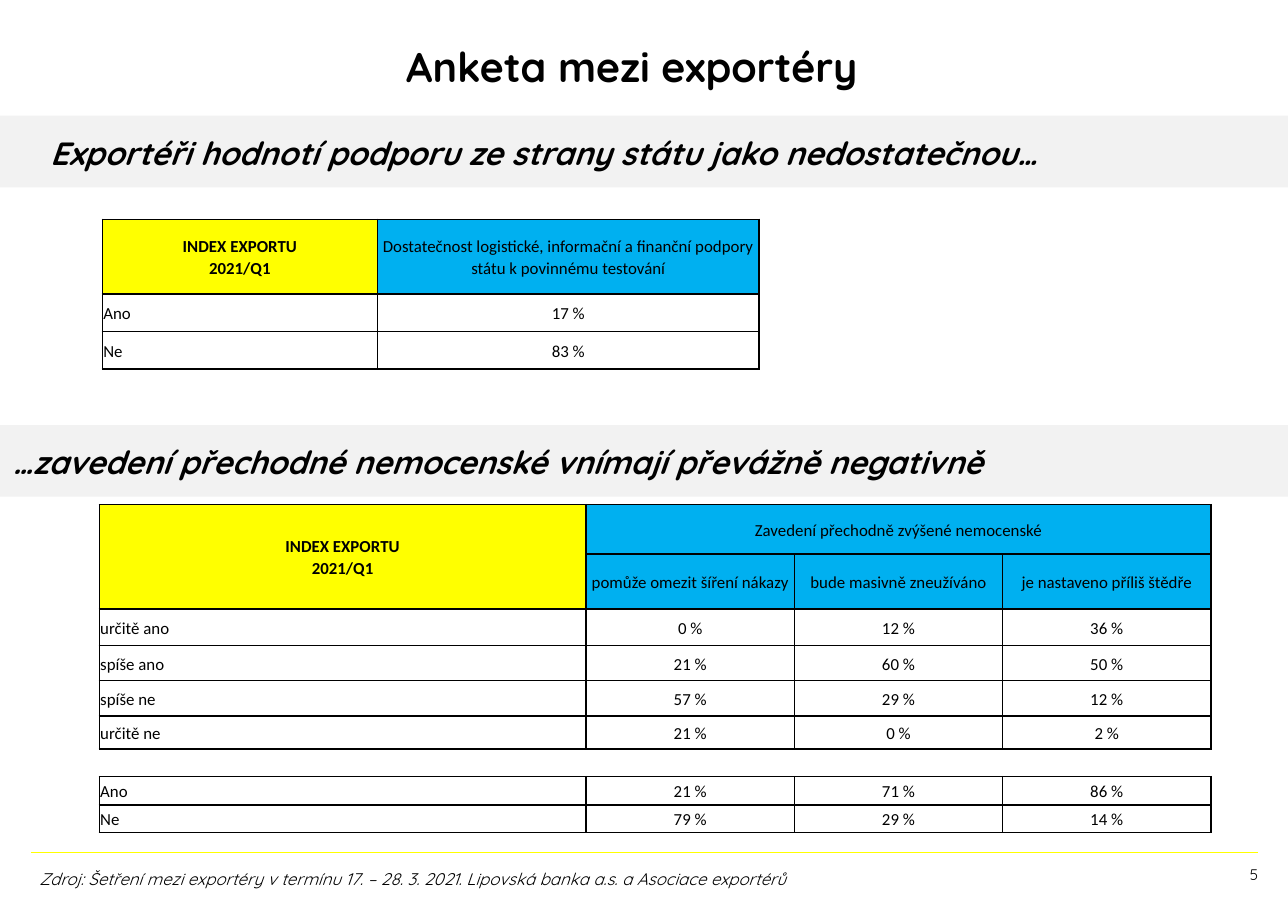
"""Builds the slide with the exporters' survey results."""
from dataclasses import dataclass

from lxml.etree import SubElement
from pptx import Presentation
from pptx.dml.color import RGBColor
from pptx.enum.shapes import MSO_CONNECTOR, MSO_SHAPE
from pptx.enum.text import MSO_ANCHOR, PP_ALIGN
from pptx.oxml.ns import qn
from pptx.util import Inches, Pt

WIDTH, HEIGHT = Inches(11.69), Inches(8.27)
PLAIN_TABLE = "{2D5ABB26-0587-4C30-8999-92F81FD0307C}"


@dataclass(frozen=True)
class Theme:
    ink: str = "000000"
    band: str = "F2F2F2"
    yellow: str = "FFFF00"
    blue: str = "00B0F0"
    display: str = "Quicksand"
    table: str = "Calibri"
    title_size: int = 27
    band_size: int = 21
    small_size: int = 11
    number_size: int = 10


THEME = Theme()

SUPPORT_ROWS = [
    ["INDEX EXPORTU\v2021/Q1",
     "Dostatečnost logistické, informační a finanční podpory státu k povinnému testování"],
    ["Ano", "17 %"],
    ["Ne", "83 %"],
]
SICK_PAY_ROWS = [
    ["INDEX EXPORTU\v2021/Q1", "Zavedení přechodně zvýšené nemocenské", "", ""],
    ["", "pomůže omezit šíření nákazy", "bude masivně zneužíváno", "je nastaveno příliš štědře"],
    ["určitě ano", "0 %", "12 %", "36 %"],
    ["spíše ano", "21 %", "60 %", "50 %"],
    ["spíše ne", "57 %", "29 %", "12 %"],
    ["určitě ne", "21 %", "0 %", "2 %"],
    ["", "", "", ""],
    ["Ano", "21 %", "71 %", "86 %"],
    ["Ne", "79 %", "29 %", "14 %"],
]


def across(percent):
    """Return a share of the slide's width."""
    return round(WIDTH * percent / 100)


def down(percent):
    """Return a share of the slide's height."""
    return round(HEIGHT * percent / 100)


def area(left, top, width, height):
    """Return a rectangle given in percent of the slide."""
    return across(left), down(top), across(width), down(height)


def write(frame, text, size, family=THEME.display, align=PP_ALIGN.LEFT, bold=False, italic=False):
    """Write one styled paragraph into a text frame."""
    frame.word_wrap = True
    frame.text = text
    para = frame.paragraphs[0]
    para.alignment = align
    font = para.font
    font.size, font.name, font.bold, font.italic = Pt(size), family, bold, italic
    font.color.rgb = RGBColor.from_string(THEME.ink)
    return para


def set_margins(target, left=0, top=0, right=0, bottom=0):
    """Set the inner margins of a text frame or a cell."""
    target.margin_left, target.margin_top = left, top
    target.margin_right, target.margin_bottom = right, bottom


def add_title(page, text):
    """Place the slide title."""
    title = page.shapes.title
    title.left, title.top, title.width, title.height = area(5.47, 2.18, 87.17, 10.04)
    frame = title.text_frame
    set_margins(frame)
    frame.vertical_anchor = MSO_ANCHOR.MIDDLE
    write(frame, text, THEME.title_size, align=PP_ALIGN.CENTER, bold=True)


def add_band(page, text, top, indent):
    """Add a full-width grey band with a heading."""
    band = page.shapes.add_shape(MSO_SHAPE.RECTANGLE, *area(0, top, 100, 7.86))
    band.shadow.inherit = False
    band.fill.solid()
    band.fill.fore_color.rgb = RGBColor.from_string(THEME.band)
    band.line.fill.background()
    frame = band.text_frame
    set_margins(frame, left=across(indent), top=down(1.93), right=across(1))
    frame.vertical_anchor = MSO_ANCHOR.TOP
    write(frame, text, THEME.band_size, bold=True, italic=True)


def add_borders(cell, sides):
    """Draw thin borders on the given sides of a cell."""
    properties = cell._tc.get_or_add_tcPr()
    for side in sides:
        line = SubElement(properties, qn(f"a:ln{side}"), w=str(Pt(1)))
        fill = SubElement(line, qn("a:solidFill"))
        SubElement(fill, qn("a:srgbClr"), val=THEME.ink)


def fill_cell(cell, text, row, column, header_rows, sides):
    """Format one table cell by its place in the table."""
    header = row < header_rows
    corner = header and column == 0
    add_borders(cell, sides)
    if header:
        cell.fill.solid()
        cell.fill.fore_color.rgb = RGBColor.from_string(THEME.yellow if corner else THEME.blue)
    else:
        cell.fill.background()
    set_margins(cell, Inches(0.01), Inches(0.01), Inches(0.01))
    cell.vertical_anchor = MSO_ANCHOR.MIDDLE
    align = PP_ALIGN.CENTER if header or column else PP_ALIGN.LEFT
    para = write(cell.text_frame, text, THEME.small_size, THEME.table, align, bold=corner)
    para.line_spacing = 1.07
    if not text:
        SubElement(para._p, qn("a:endParaRPr"), sz=str(THEME.small_size * 100))


def add_grid(page, rows, left, top, widths, heights, header_rows):
    """Add a bordered table whose first rows are headers."""
    box = area(left, top, sum(widths), sum(heights))
    table = page.shapes.add_table(len(rows), len(widths), *box).table
    table._tbl.tblPr.find(qn("a:tableStyleId")).text = PLAIN_TABLE
    table.first_row = table.horz_banding = False
    for column, width in zip(table.columns, widths):
        column.width = across(width)
    for index, (texts, height) in enumerate(zip(rows, heights)):
        table.rows[index].height = down(height)
        sides = "LRTB" if any(texts) else "TB"
        for column, text in enumerate(texts):
            fill_cell(table.cell(index, column), text, index, column, header_rows, sides)
    return table


def add_note(page, text, box, size, align=PP_ALIGN.LEFT, italic=False):
    """Add a small text at the foot of the slide."""
    frame = page.shapes.add_textbox(*box).text_frame
    write(frame, text, size, align=align, italic=italic)
    return frame


def add_rule(page, left, right, top):
    """Add the yellow line above the footer."""
    ends = across(left), down(top), across(right), down(top)
    rule = page.shapes.add_connector(MSO_CONNECTOR.STRAIGHT, *ends)
    rule.line.color.rgb = RGBColor.from_string(THEME.yellow)
    rule.line.width = Pt(1)
    SubElement(rule._element.spPr, qn("a:effectLst"))


def main():
    """Build and save the slide."""
    deck = Presentation()
    deck.slide_width, deck.slide_height = WIDTH, HEIGHT
    page = deck.slides.add_slide(deck.slide_layouts[5])
    add_rule(page, 2.4, 97.7, 93.6)
    add_title(page, "Anketa mezi exportéry")
    add_band(page, "Exportéři hodnotí podporu ze strany státu jako nedostatečnou…", 12.7, 3.9)
    add_band(page, "…zavedení přechodné nemocenské vnímají převážně negativně", 46.67, 1)
    add_grid(page, SUPPORT_ROWS, 7.94, 24.06, [21.37, 29.63], [8.22, 4.11, 4.11], 1)
    sick_pay = add_grid(page, SICK_PAY_ROWS, 7.7, 55.38, [37.81] + [16.17] * 3,
                        [5.44, 6.05, 3.99, 3.87, 3.87, 3.63, 3.02, 3.14, 3.02], 2)
    sick_pay.cell(0, 0).merge(sick_pay.cell(1, 0))
    sick_pay.cell(0, 1).merge(sick_pay.cell(0, 3))
    add_note(page, "Zdroj: Šetření mezi exportéry v termínu 17. – 28. 3. 2021. "
             "Lipovská banka a.s. a Asociace exportérů",
             area(2.22, 94.8, 85.03, 3.51), THEME.small_size, italic=True)
    number = add_note(page, "5", area(57.83, 94.92, 39.86, 5.08), THEME.number_size, PP_ALIGN.RIGHT)
    set_margins(number)
    deck.save("out.pptx")


if __name__ == "__main__":
    main()
